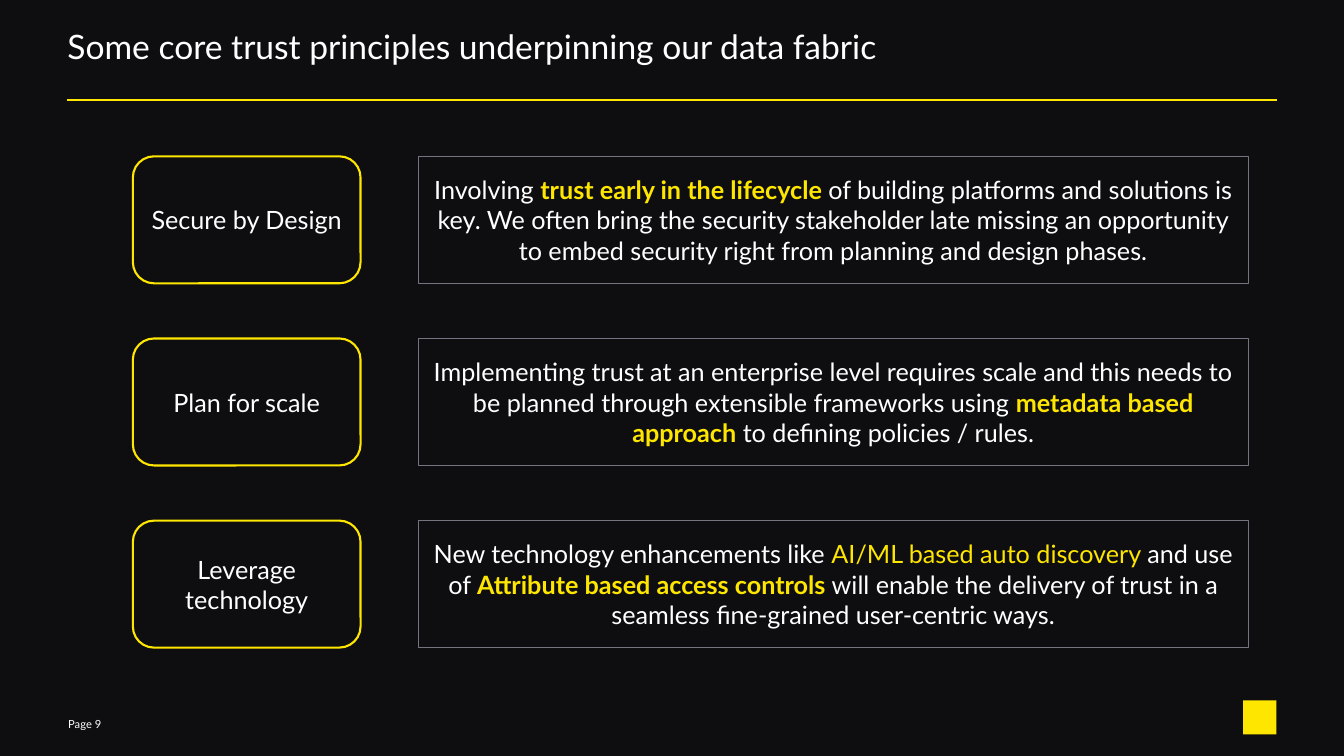
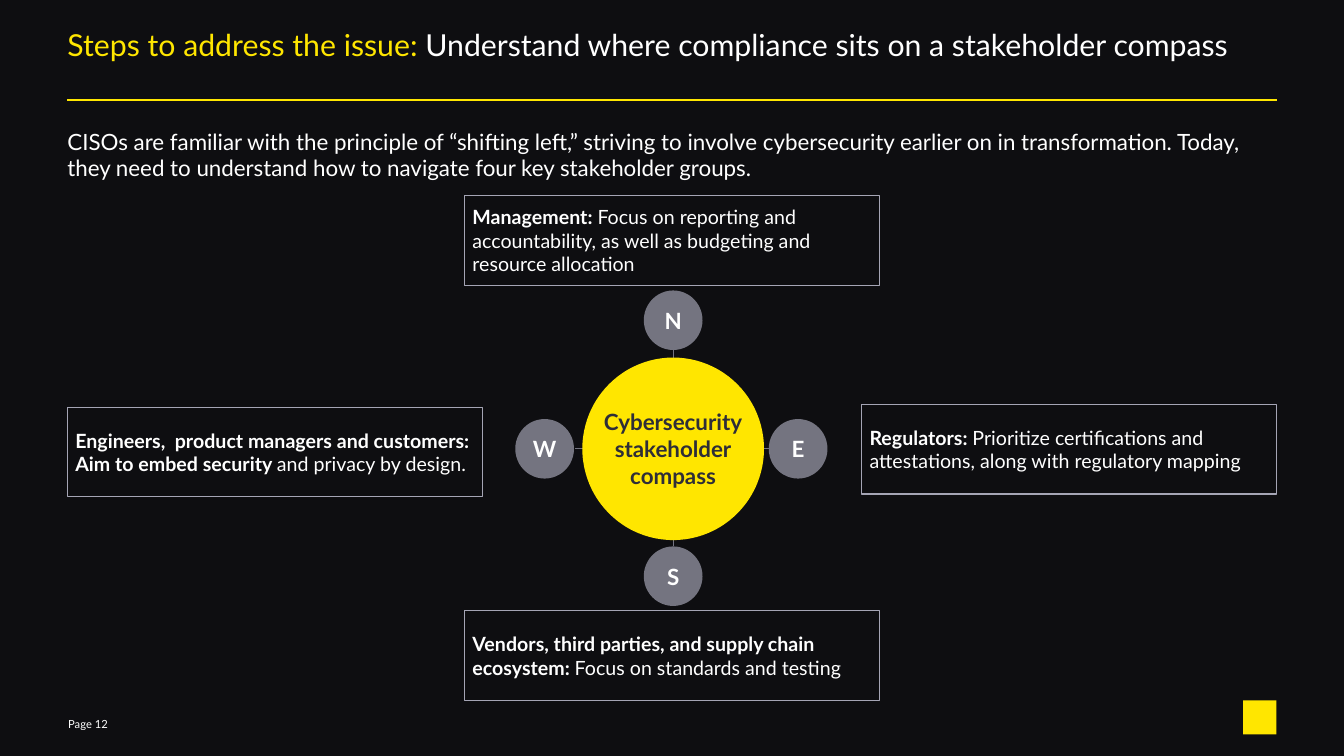
from lxml import etree
from pptx import Presentation
from pptx.dml.color import RGBColor
from pptx.enum.shapes import MSO_CONNECTOR, MSO_SHAPE
from pptx.enum.text import MSO_ANCHOR, MSO_AUTO_SIZE, PP_ALIGN
from pptx.oxml.ns import qn
from pptx.util import Cm, Pt

BACKGROUND = RGBColor(0x0E, 0x0E, 0x11)
YELLOW = RGBColor(0xFF, 0xE6, 0x00)
WHITE = RGBColor(0xFF, 0xFF, 0xFF)
CHARCOAL = RGBColor(0x2E, 0x2E, 0x38)
GRAY = RGBColor(0x74, 0x74, 0x80)
LIGHT_GRAY = RGBColor(0xA5, 0xA5, 0xB5)

FONT = "Lato"
LEFT, RIGHT = 1.7, 32.18  # content edges in cm
TITLE_ONLY = 5


class Deck:
    """Holds the shared style and the current slide; lengths are in cm."""

    def __init__(self):
        self.presentation = Presentation()
        self.presentation.slide_width = Cm(33.88)
        self.presentation.slide_height = Cm(19.05)
        fill = self.presentation.slide_master.background.fill
        fill.solid()
        fill.fore_color.rgb = BACKGROUND
        self.slide = None

    def new_slide(self, title, page, title_size=24):
        """Add a slide with title, rule, page number and corner mark."""
        layout = self.presentation.slide_layouts[TITLE_ONLY]
        self.slide = self.presentation.slides.add_slide(layout)
        shape = self.slide.shapes.title
        shape.left, shape.top = Cm(LEFT), Cm(0.81)
        shape.width, shape.height = Cm(RIGHT - LEFT), Cm(1.65)
        shape.text_frame.auto_size = MSO_AUTO_SIZE.NONE
        paragraph = self.set_text(shape, title, title_size,
                                  anchor=MSO_ANCHOR.TOP, insets=(0, 0, 0, 0))
        paragraph.line_spacing = 0.85
        self.line(LEFT, 2.51, RIGHT, 2.51, YELLOW, 1.5)
        self.text(1.72, 17.98, 1.85, 0.51, [f"Page {page}"], 8,
                  anchor=MSO_ANCHOR.MIDDLE)
        self.shape(MSO_SHAPE.RECTANGLE, 31.34, 17.65, 0.84, 0.86, fill=YELLOW)

    def set_text(self, shape, runs, size, color=WHITE, bold=False,
                 align=PP_ALIGN.LEFT, anchor=MSO_ANCHOR.MIDDLE,
                 insets=(0.25, 0.13, 0.25, 0.13), wrap=True):
        """Fill a shape with one paragraph; a run is text or (text, format)."""
        frame = shape.text_frame
        frame.word_wrap = wrap
        frame.vertical_anchor = anchor
        (frame.margin_left, frame.margin_top,
         frame.margin_right, frame.margin_bottom) = map(Cm, insets)
        paragraph = frame.paragraphs[0]
        paragraph.alignment = align
        paragraph.font.name = FONT
        paragraph.font.size = Pt(size)
        paragraph.font.color.rgb = color
        paragraph.font.bold = bold
        for item in runs:
            text, style = (item, {}) if isinstance(item, str) else item
            for index, part in enumerate(text.split("\n")):
                if index:
                    paragraph.add_line_break()
                run = paragraph.add_run()
                run.text = part
                if "color" in style:
                    run.font.color.rgb = style["color"]
                if "bold" in style:
                    run.font.bold = style["bold"]
        return paragraph

    def text(self, left, top, width, height, runs, size,
             anchor=MSO_ANCHOR.TOP, insets=(0, 0, 0, 0)):
        box = self.slide.shapes.add_textbox(Cm(left), Cm(top), Cm(width), Cm(height))
        self.set_text(box, runs, size, anchor=anchor, insets=insets)

    def shape(self, kind, left, top, width, height, fill=None, outline=None,
              weight=0.75):
        shape = self.slide.shapes.add_shape(
            kind, Cm(left), Cm(top), Cm(width), Cm(height))
        shape.shadow.inherit = False
        if fill is None:
            shape.fill.background()
        else:
            shape.fill.solid()
            shape.fill.fore_color.rgb = fill
        if outline is None:
            shape.line.fill.background()
        else:
            shape.line.color.rgb = outline
            shape.line.width = Pt(weight)
        return shape

    def circle(self, center_x, center_y, width, height, text, fill, color):
        shape = self.shape(MSO_SHAPE.OVAL, center_x - width / 2,
                           center_y - height / 2, width, height, fill=fill)
        self.set_text(shape, [text], 16, color, bold=True, align=PP_ALIGN.CENTER,
                      insets=(0.1, 0.1, 0.1, 0.1), wrap=False)

    def line(self, x1, y1, x2, y2, color, weight):
        line = self.slide.shapes.add_connector(
            MSO_CONNECTOR.STRAIGHT, Cm(x1), Cm(y1), Cm(x2), Cm(y2))
        line.line.color.rgb = color
        line.line.width = Pt(weight)
        etree.SubElement(line._element.spPr, qn("a:effectLst"))


KEY = {"color": YELLOW, "bold": True}
STRONG = {"bold": True}

PRINCIPLES = [
    ("Secure by Design", [
        "Involving ", ("trust early in the lifecycle ", KEY),
        "of building platforms and solutions is key. We often bring the security "
        "stakeholder late missing an opportunity to embed security right from "
        "planning and design phases."]),
    ("Plan for scale", [
        "Implementing trust at an enterprise level requires scale and this needs "
        "to be planned through extensible frameworks using ",
        ("metadata based approach", KEY), " to defining policies / rules."]),
    ("Leverage technology", [
        "New technology enhancements like ",
        ("AI/ML based auto discovery ", {"color": YELLOW}), "and use of ",
        ("Attribute based access controls ", KEY),
        "will enable the delivery of trust in a seamless fine-grained "
        "user-centric ways."]),
]

# Letter, badge offset from the hub, box left and top, bold lead, remainder
STAKEHOLDERS = [
    ("N", 0, -3.24, 11.71, 4.93, "Management: ",
     "Focus on reporting and accountability, as well as budgeting and "
     "resource allocation"),
    ("S", 0, 3.21, 11.71, 15.39,
     "Vendors, third parties, and supply chain ecosystem: ",
     "Focus on standards and testing"),
    ("W", -3.24, 0, LEFT, 10.26,
     "Engineers,  product managers and customers: Aim to embed security ",
     "and privacy by design."),
    ("E", 3.15, 0, 21.72, 10.19, "Regulators: ",
     "Prioritize certifications and attestations, along with regulatory mapping"),
]


def add_principles(deck):
    deck.new_slide(["Some core trust principles underpinning our data fabric"], 9)
    top, pitch, height = 3.94, 4.59, 3.2
    for row, (label, runs) in enumerate(PRINCIPLES):
        y = top + row * pitch
        name_box = deck.shape(MSO_SHAPE.ROUNDED_RECTANGLE, 3.35, y, 5.74, height,
                              outline=YELLOW, weight=1.5)
        deck.set_text(name_box, [label], 18, align=PP_ALIGN.CENTER)
        detail_box = deck.shape(MSO_SHAPE.RECTANGLE, 10.54, y, 20.93, height,
                                outline=GRAY)
        deck.set_text(detail_box, runs, 18, align=PP_ALIGN.CENTER)


def add_compass(deck):
    deck.new_slide([("Steps to address the issue: ", {"color": YELLOW}),
                    "Understand where compliance sits on a stakeholder compass"],
                   12, title_size=21.6)
    deck.text(LEFT, 3.12, 30.3, 1.47, [
        "CISOs are familiar with the principle of “shifting left,” striving to "
        "involve cybersecurity earlier on in transformation. Today, they need to "
        "understand how to navigate four key stakeholder groups."],
        16, insets=(0, 0.1, 0, 0))

    # Compass axes and hub
    hub_x, hub_y = 16.97, 11.31
    deck.line(hub_x, 13.77, hub_x, 8.81, GRAY, 0.75)
    deck.line(19.38, hub_y, 14.5, hub_y, GRAY, 0.75)
    deck.circle(hub_x, hub_y, 4.58, 4.6, "Cybersecurity\nstakeholder\ncompass",
                YELLOW, CHARCOAL)

    # Compass points with their stakeholder boxes
    for letter, dx, dy, left, top, lead, remainder in STAKEHOLDERS:
        deck.circle(hub_x + dx, hub_y + dy, 1.48, 1.5, letter, GRAY, WHITE)
        box = deck.shape(MSO_SHAPE.RECTANGLE, left, top, 10.46, 2.26,
                         outline=LIGHT_GRAY)
        deck.set_text(box, [(lead, STRONG), remainder], 14,
                      insets=(0.2, 0.1, 0.1, 0.1))


def main():
    deck = Deck()
    add_principles(deck)
    add_compass(deck)
    deck.presentation.save("out.pptx")


if __name__ == "__main__":
    main()
